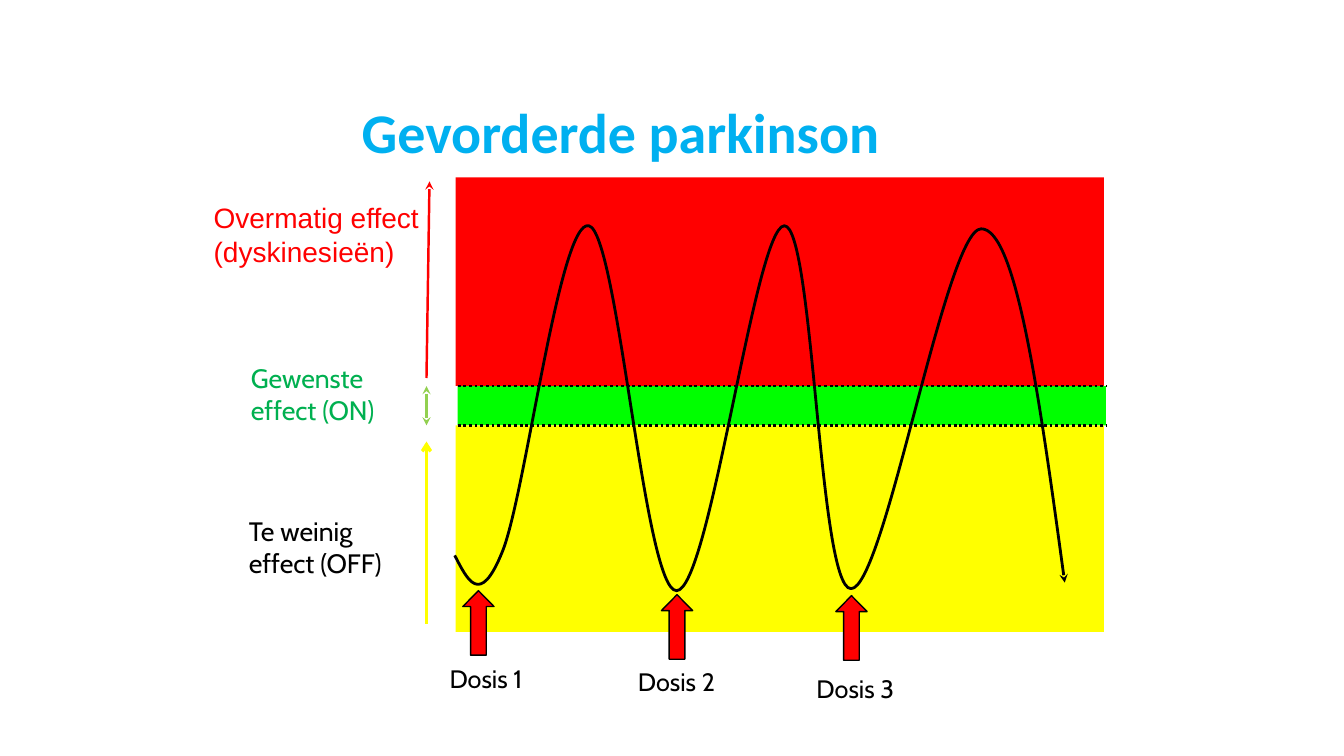
import pptx
import pptx.util
import pptx.dml.color
import pptx.enum.dml
import pptx.enum.shapes
import pptx.enum.text
import pptx.oxml
import pptx.oxml.ns

Inches = pptx.util.Inches
Pt = pptx.util.Pt
RGBColor = pptx.dml.color.RGBColor
Shape = pptx.enum.shapes.MSO_SHAPE
Align = pptx.enum.text.PP_ALIGN
qn = pptx.oxml.ns.qn

BLACK = RGBColor(0x00, 0x00, 0x00)
RED = RGBColor(0xFF, 0x00, 0x00)
LIME = RGBColor(0x00, 0xFF, 0x00)
YELLOW = RGBColor(0xFF, 0xFF, 0x00)
GREEN = RGBColor(0x00, 0xB0, 0x50)
LIGHT_GREEN = RGBColor(0x92, 0xD0, 0x50)
SKY = RGBColor(0x00, 0xB0, 0xF0)

TITLE = "Gevorderde parkinson"
TITLE_AREA = (2.18, 0.92, 7.95, 0.77)

# left, top, height, colour
BAND_WIDTH = 6.43
BANDS = [
    (4.52, 1.76, 2.07, RED),
    (4.54, 3.83, 0.39, LIME),
    (4.52, 4.22, 2.05, YELLOW),
]

# Start point, then two control points and an end point for each bend
CURVE = [
    (4.51, 5.51),
    (4.64, 5.76), (4.76, 6.02), (4.98, 5.48),
    (5.21, 4.93), (5.55, 2.17), (5.84, 2.24),
    (6.13, 2.30), (6.39, 5.86), (6.71, 5.86),
    (7.04, 5.86), (7.49, 2.24), (7.78, 2.24),
    (8.07, 2.24), (8.12, 5.84), (8.44, 5.84),
    (8.77, 5.85), (9.38, 2.28), (9.73, 2.27),
    (10.08, 2.26), (10.32, 4.02), (10.56, 5.78),
]

DOSE_ARROWS = [(4.59, 5.86), (6.56, 5.90), (8.29, 5.91)]
DOSE_ARROW_SIZE = (0.31, 0.64)

# text, area, font, size, colour, alignment, wrap
LABELS = [
    ("Dosis 1", (4.27, 6.53, 1.1, 0.4), "Cabin", 18, BLACK, Align.CENTER, True),
    ("Dosis 2", (6.16, 6.56, 1.1, 0.4), "Cabin", 18, BLACK, Align.CENTER, True),
    ("Dosis 3", (8.0, 6.63, 1.0, 0.4), "Cabin", 18, BLACK, Align.LEFT, False),
    ("Overmatig effect (dyskinesieën)", (2.02, 1.94, 2.39, 0.77),
     "Arial", 20, RED, Align.LEFT, True),
    ("Gewenste effect (ON)", (2.39, 3.54, 1.92, 0.74),
     "Cabin", 19, GREEN, Align.LEFT, True),
    ("Te weinig effect (OFF)", (2.37, 5.06, 1.92, 0.74),
     "Cabin", 19, BLACK, Align.LEFT, True),
]

# start, end, colour, width, arrowheads, dotted
LINES = [
    ((4.26, 1.80), (4.23, 3.75), RED, 1.75, {"headEnd": "stealth"}, False),
    ((4.23, 3.83), (4.23, 4.22), LIGHT_GREEN, 1.75,
     {"headEnd": "stealth", "tailEnd": "stealth"}, False),
    ((4.23, 6.19), (4.23, 4.38), YELLOW, 2.25, {"tailEnd": "arrow"}, False),
    ((4.54, 4.22), (10.98, 4.22), BLACK, 2, {}, True),
    ((4.54, 3.83), (10.98, 3.83), BLACK, 2, {}, True),
]


def inches(values):
    return [Inches(value) for value in values]


def style_line(line, colour, width, heads):
    line.color.rgb = colour
    line.width = Pt(width)
    for end, kind in heads.items():
        pptx.oxml.ns  # namespace helpers
        line_xml = line._get_or_add_ln()
        line_xml.append(line_xml.makeelement(qn("a:" + end), {"type": kind}))


def add_filled(page, kind, area, colour):
    shape = page.shapes.add_shape(kind, *inches(area))
    shape.shadow.inherit = False
    shape.fill.solid()
    shape.fill.fore_color.rgb = colour
    shape.line.fill.background()
    return shape


def write_text(shape, text, alignment, wrap, font_format):
    frame = shape.text_frame
    frame.text = text
    frame.word_wrap = wrap
    frame.auto_size = pptx.enum.text.MSO_AUTO_SIZE.SHAPE_TO_FIT_TEXT
    frame.vertical_anchor = pptx.enum.text.MSO_ANCHOR.TOP
    para = frame.paragraphs[0]
    para.alignment = alignment
    font = para.runs[0].font
    font.color.rgb = font_format["colour"]
    for name in ("name", "size", "bold"):
        setattr(font, name, font_format[name])


def add_curve(page, points):
    """Draw the points as a chain of cubic bends ending in an arrowhead."""
    scaled = [tuple(inches(point)) for point in points]
    builder = page.shapes.build_freeform(*scaled[0])
    builder.add_line_segments(scaled[1:], close=False)
    curve = builder.convert_to_shape()
    steps = list(curve._element.iter(qn("a:lnTo")))
    for first in range(0, len(steps), 3):
        bend = steps[first].makeelement(qn("a:cubicBezTo"), {})
        steps[first].addprevious(bend)
        for step in steps[first:first + 3]:
            bend.append(step[0])
            step.getparent().remove(step)
    curve.shadow.inherit = False
    curve.fill.background()
    style_line(curve.line, BLACK, 2, {"tailEnd": "stealth"})


def main():
    deck = pptx.Presentation()
    deck.slide_width, deck.slide_height = inches((13.33, 7.5))
    page = deck.slides.add_slide(deck.slide_layouts[5])

    title = page.shapes.title
    title.left, title.top, title.width, title.height = inches(TITLE_AREA)
    write_text(title, TITLE, Align.CENTER, True,
               {"name": "Calibri", "size": Pt(40), "bold": True, "colour": SKY})

    for left, top, height, colour in BANDS:
        add_filled(page, Shape.RECTANGLE, (left, top, BAND_WIDTH, height), colour)
    add_curve(page, CURVE)
    for corner in DOSE_ARROWS:
        arrow = add_filled(page, Shape.UP_ARROW, corner + DOSE_ARROW_SIZE, RED)
        arrow.adjustments[1] = 0.51
        style_line(arrow.line, BLACK, 1, {})

    for text, area, font, size, colour, alignment, wrap in LABELS:
        box = page.shapes.add_textbox(*inches(area))
        write_text(box, text, alignment, wrap,
                   {"name": font, "size": Pt(size), "bold": False, "colour": colour})

    for start, end, colour, width, heads, dotted in LINES:
        connector = page.shapes.add_connector(
            pptx.enum.shapes.MSO_CONNECTOR.STRAIGHT, *inches(start + end))
        style_line(connector.line, colour, width, heads)
        if dotted:
            connector.line.dash_style = pptx.enum.dml.MSO_LINE.ROUND_DOT
        properties = connector._element.spPr
        properties.append(properties.makeelement(qn("a:effectLst"), {}))

    deck.save("out.pptx")


if __name__ == "__main__":
    main()
